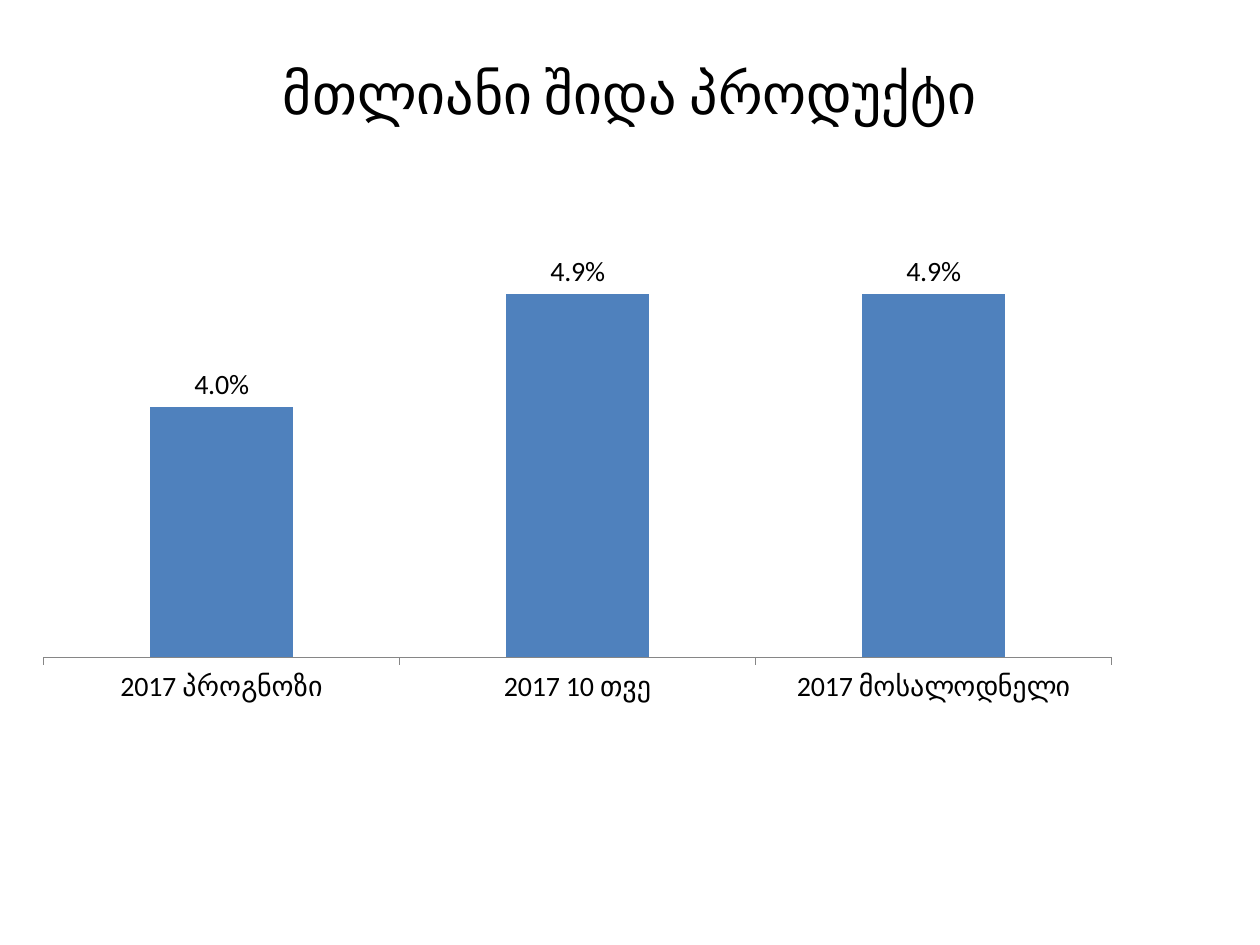
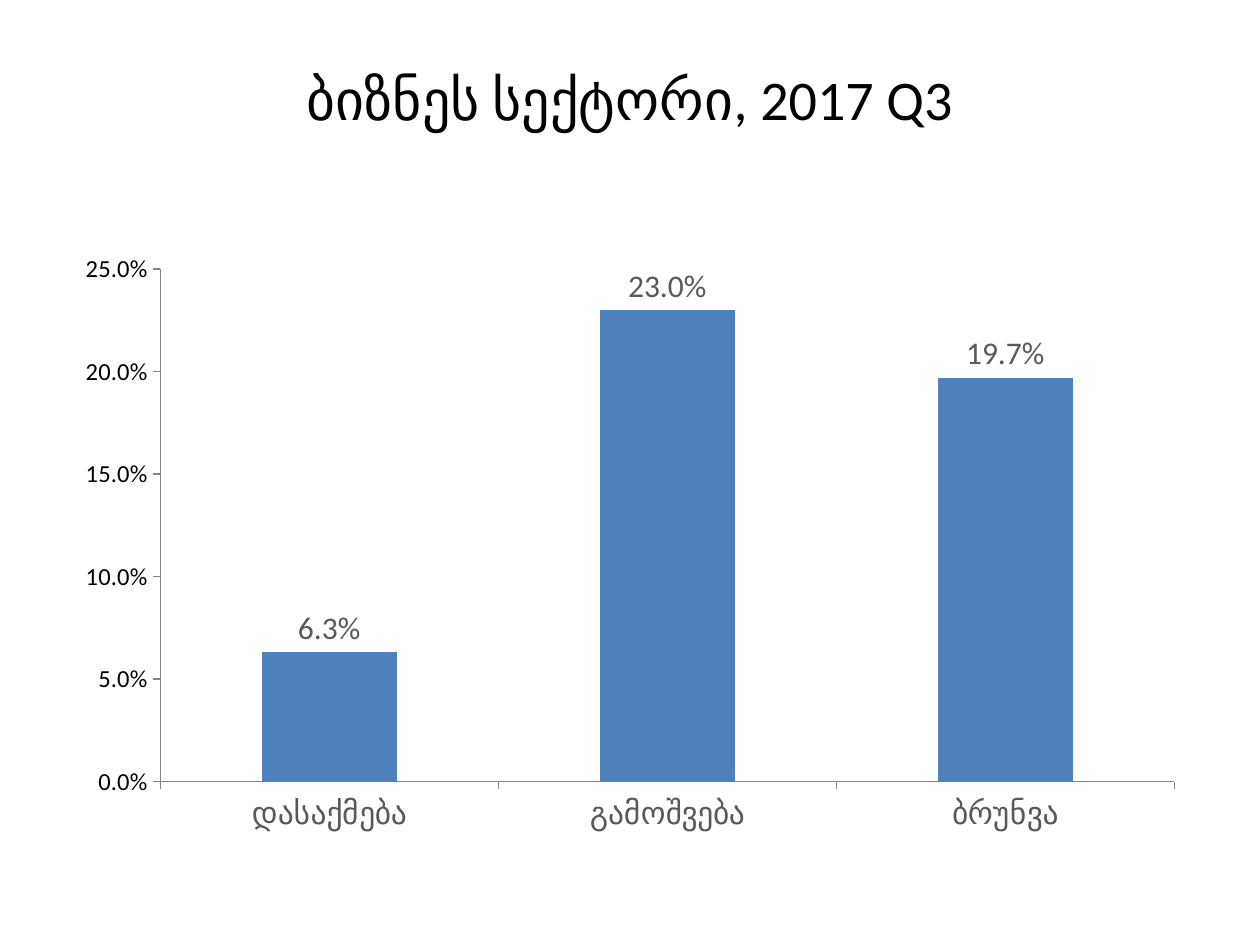
from dataclasses import dataclass

from lxml import etree
from pptx import Presentation, util as u
from pptx.chart.data import CategoryChartData
from pptx.dml.color import RGBColor
from pptx.enum import chart as ch, text
from pptx.oxml import ns


@dataclass(frozen=True)
class Theme:
    font: str = "Calibri"
    ink: str = "000000"
    muted: str = "595959"
    bar: str = "4F81BD"
    axis: str = "868686"
    title_pt: int = 32
    tick_pt: int = 14
    percent: str = "0.0%"
    gap: int = 150


class Deck:
    """Holds the theme and current slide; boxes are (x, y, w, h) in inches on a 10 x 7.5 grid."""

    COLS, ROWS = 10, 7.5

    def __init__(self, theme):
        self.t = theme
        self.prs = Presentation()
        self.prs.slide_width = u.Inches(self.COLS)
        self.prs.slide_height = u.Inches(self.ROWS)
        self.s = None

    def box(self, x, y, w, h):
        col = self.prs.slide_width / self.COLS
        row = self.prs.slide_height / self.ROWS
        return [u.Emu(round(v)) for v in (x * col, y * row, w * col, h * row)]

    def style_font(self, font, size, color):
        font.name = self.t.font
        font.size = u.Pt(size)
        font.color.rgb = RGBColor.from_string(color)

    def slide(self, title, title_height):
        self.s = self.prs.slides.add_slide(self.prs.slide_layouts[6])
        tf = self.s.shapes.add_textbox(*self.box(0.5, 0.3, 9, title_height)).text_frame
        tf.word_wrap = True
        tf.vertical_anchor = text.MSO_ANCHOR.MIDDLE
        p = tf.paragraphs[0]
        p.text = title
        p.alignment = text.PP_ALIGN.CENTER
        self.style_font(p.font, self.t.title_pt, self.t.ink)

    def columns(self, box, values, size, color, low, high, show_scale=True, plot=None):
        data = CategoryChartData(number_format=self.t.percent)
        data.categories = list(values)
        data.add_series("Series 1", list(values.values()))
        chart = self.s.shapes.add_chart(
            ch.XL_CHART_TYPE.COLUMN_CLUSTERED, *self.box(*box), data).chart
        chart.has_title = chart.has_legend = False
        self.style_font(chart.font, size, self.t.ink)

        bars = chart.plots[0]
        bars.gap_width = self.t.gap
        bars.vary_by_categories = False
        fill = bars.series[0].format.fill
        fill.solid()
        fill.fore_color.rgb = RGBColor.from_string(self.t.bar)

        bars.has_data_labels = True
        labels = bars.data_labels
        labels.show_value = True
        labels.position = ch.XL_LABEL_POSITION.OUTSIDE_END
        labels.number_format = self.t.percent
        labels.number_format_is_linked = False
        self.style_font(labels.font, size, color)

        scale = chart.value_axis
        scale.minimum_scale, scale.maximum_scale = low, high
        scale.visible = show_scale
        self.axis(chart.category_axis, size, color)
        self.axis(scale, self.t.tick_pt, self.t.ink)
        scale.tick_labels.number_format = self.t.percent
        scale.tick_labels.number_format_is_linked = False
        if plot:
            self.plot_layout(chart, plot)

    def axis(self, axis, size, color):
        axis.has_major_gridlines = False
        axis.major_tick_mark = ch.XL_TICK_MARK.OUTSIDE
        axis.minor_tick_mark = ch.XL_TICK_MARK.NONE
        axis.format.line.color.rgb = RGBColor.from_string(self.t.axis)
        axis.format.line.width = u.Pt(0.75)
        self.style_font(axis.tick_labels.font, size, color)

    def plot_layout(self, chart, shares):
        """Fix the inner plot area as x, y, w, h shares of the chart."""
        area = chart._chartSpace.find(".//" + ns.qn("c:plotArea"))
        for old in area.findall(ns.qn("c:layout")):
            area.remove(old)
        layout = etree.Element(ns.qn("c:layout"))
        area.insert(0, layout)
        manual = etree.SubElement(layout, ns.qn("c:manualLayout"))
        settings = [("layoutTarget", "inner"), ("xMode", "edge"), ("yMode", "edge")]
        for tag, value in settings + list(zip("xywh", shares)):
            etree.SubElement(manual, ns.qn("c:" + tag)).set("val", str(value))


def main():
    theme = Theme()
    deck = Deck(theme)

    deck.slide("მთლიანი შიდა პროდუქტი", 0.87)
    gdp_growth = {"2017 პროგნოზი": 0.04, "2017 10 თვე": 0.049, "2017 მოსალოდნელი": 0.049}
    deck.columns((0.17, 1.5, 8.83, 4.83), gdp_growth, 16, theme.ink, 0.02, 0.055,
                 show_scale=False, plot=(0.02, 0.05, 0.96, 0.72))

    deck.slide("ბიზნეს სექტორი, 2017 Q3", 0.95)
    business_growth = {"დასაქმება": 0.063, "გამოშვება": 0.23, "ბრუნვა": 0.197}
    deck.columns((0.5, 1.92, 9, 4.78), business_growth, 18, theme.muted, 0, 0.25)

    deck.prs.save("out.pptx")


if __name__ == "__main__":
    main()
